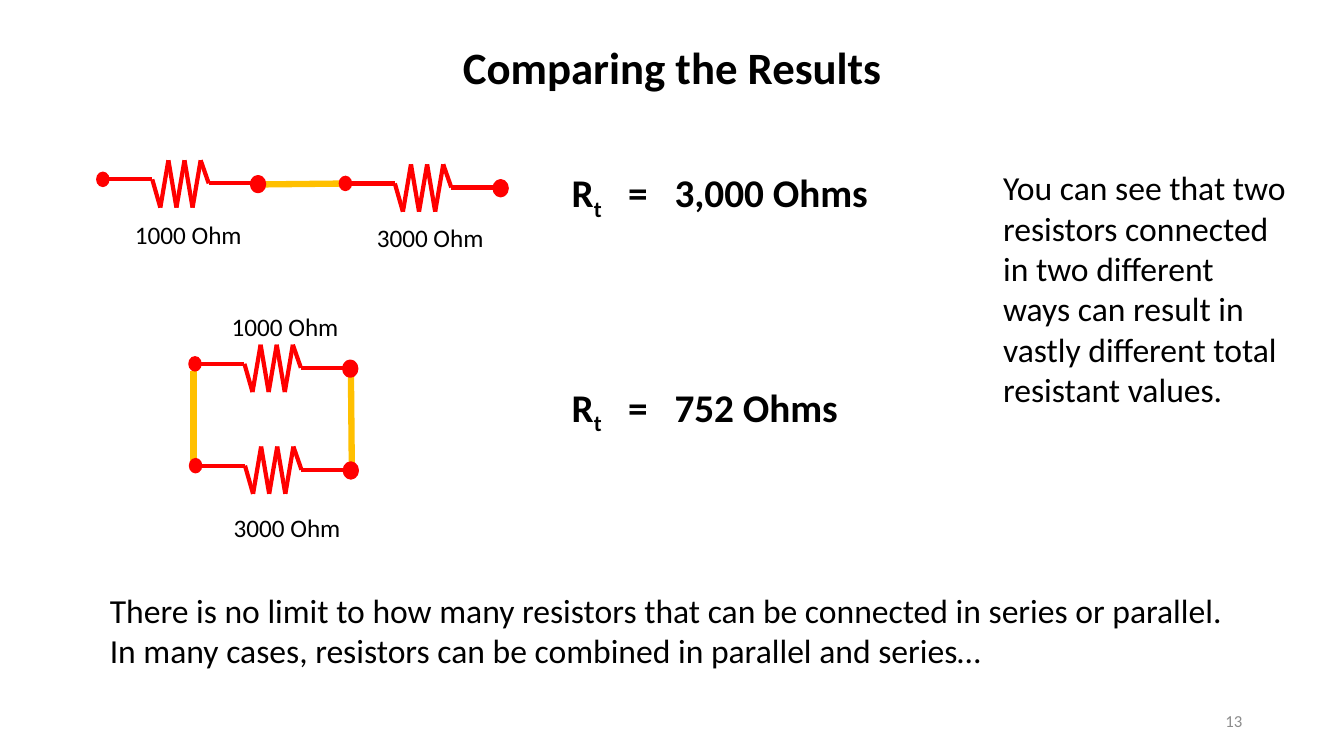
from dataclasses import dataclass
from itertools import pairwise

from lxml import etree
from pptx import Presentation
from pptx import util as u
from pptx.dml.color import RGBColor
from pptx.enum import shapes, text
from pptx.oxml.ns import qn

COLORS = {"ink": "000000", "resistor": "FF0000", "wire": "FFC000", "number": "8C8C8C"}
FONT = "Calibri"
SLIDE_W, SLIDE_H = 13.33, 7.5

Point = tuple[float, float]  # percent of slide width, percent of slide height
Box = tuple[float, float, float, float]  # left, top, width, height in percent

# Resistor outline, measured from the left end of its first terminal
DOT_W, DOT_H = 0.9, 1.87
ZIGZAG_START, ZIGZAG_STEP = 4.13, 0.6
ZIGZAG_HEIGHTS = [0, 3.73, -2.53, 3.73, -2.53, 3.73, -2.53, 0.53]
LEAD_END = 11.55


@dataclass
class Resistor:
    left: float
    lead_y: float
    label: str
    label_at: Point


@dataclass
class Circuit:
    wires: list[tuple[Point, Point]]
    resistors: list[Resistor]


@dataclass
class Caption:
    words: str
    box: Box
    size: int = 24
    color: str = "ink"
    align: text.PP_ALIGN = text.PP_ALIGN.LEFT
    anchor: text.MSO_ANCHOR = text.MSO_ANCHOR.TOP


@dataclass
class Result:
    value: str
    top: float


PARALLEL = Circuit(
    wires=[((26.18, 62.53), (26.11, 49.07)), ((14.4, 60.93), (14.4, 49.07))],
    resistors=[
        Resistor(14.06, 48.13, "1000 Ohm", (16.5, 40.53)),
        Resistor(14.1, 61.6, "3000 Ohm", (16.65, 67.07)),
    ],
)
SERIES = Circuit(
    wires=[((19.2, 24.4), (26.1, 24.27))],
    resistors=[
        Resistor(7.2, 23.73, "1000 Ohm", (9.3, 28.4)),
        Resistor(25.25, 24.27, "3000 Ohm", (27.3, 28.8)),
    ],
)
RESULTS = [Result("752 Ohms", 50), Result("3,000 Ohms", 21.6)]
CAPTIONS = [
    Caption("You can see that two resistors connected in two different ways "
            "can result in vastly different total resistant values.",
            (73.9, 21.47, 22.5, 39.07)),
    Caption("There is no limit to how many resistors that can be connected in "
            "series or parallel. In many cases, resistors can be combined in "
            "parallel and series…", (7.43, 77.33, 84.85, 12.13)),
    Caption("13", (70.67, 92.67, 22.5, 5.33), 12, "number",
            text.PP_ALIGN.RIGHT, text.MSO_ANCHOR.MIDDLE),
]


def x(share: float) -> u.Emu:
    return u.Inches(SLIDE_W * share / 100)


def y(share: float) -> u.Emu:
    return u.Inches(SLIDE_H * share / 100)


def place(box: Box) -> tuple[u.Emu, u.Emu, u.Emu, u.Emu]:
    left, top, width, height = box
    return x(left), y(top), x(width), y(height)


def rgb(name: str) -> RGBColor:
    return RGBColor.from_string(COLORS[name])


def style(paragraph, size: int, color: str = "ink", bold: bool = False) -> None:
    font = paragraph.font
    font.name, font.size, font.bold = FONT, u.Pt(size), bold
    font.color.rgb = rgb(color)


def draw_line(parent, start: Point, end: Point, color: str, width: float) -> None:
    line = parent.add_connector(shapes.MSO_CONNECTOR.STRAIGHT,
                                x(start[0]), y(start[1]), x(end[0]), y(end[1]))
    line.line.color.rgb = rgb(color)
    line.line.width = u.Pt(width)
    etree.SubElement(line._element.spPr, qn("a:effectLst"))


def draw_terminal(parent, left: float, top: float, outline: float) -> None:
    dot = parent.add_shape(shapes.MSO_SHAPE.OVAL, *place((left, top, DOT_W, DOT_H)))
    dot.shadow.inherit = False
    dot.fill.solid()
    dot.fill.fore_color.rgb = rgb("resistor")
    dot.line.color.rgb = rgb("resistor")
    dot.line.width = u.Pt(outline)


def draw_caption(parent, caption: Caption) -> None:
    frame = parent.add_textbox(*place(caption.box)).text_frame
    frame.word_wrap = True
    frame.vertical_anchor = caption.anchor
    paragraph = frame.paragraphs[0]
    paragraph.text = caption.words
    paragraph.alignment = caption.align
    style(paragraph, caption.size, caption.color)


def draw_resistor(parent, resistor: Resistor) -> None:
    zigzag = [(ZIGZAG_START + i * ZIGZAG_STEP, dy) for i, dy in enumerate(ZIGZAG_HEIGHTS)]
    outline = [(DOT_W, 0), *zigzag, (LEAD_END, ZIGZAG_HEIGHTS[-1])]
    points = [(resistor.left + dx, resistor.lead_y + dy) for dx, dy in outline]
    for start, end in pairwise(points):
        draw_line(parent, start, end, "resistor", 3)
    draw_terminal(parent, resistor.left + LEAD_END, resistor.lead_y - 0.3, 3)
    draw_terminal(parent, resistor.left, resistor.lead_y - DOT_H / 2, 1)
    draw_caption(parent, Caption(resistor.label, (*resistor.label_at, 11.5, 5.33), 18))


def draw_circuit(slide, circuit: Circuit) -> None:
    parent = slide.shapes.add_group_shape().shapes
    for start, end in circuit.wires:
        draw_line(parent, start, end, "wire", 4.5)
    for resistor in circuit.resistors:
        draw_resistor(parent, resistor)


def draw_result(slide, result: Result) -> None:
    frame = slide.shapes.add_textbox(*place((41.8, result.top, 25.65, 7.6))).text_frame
    frame.word_wrap = True
    equation = frame.paragraphs[0]
    style(equation, 28, bold=True)
    equation.add_run().text = "R"
    subscript = equation.add_run()
    subscript.text = "t"
    subscript.font._element.set("baseline", "-25000")
    equation.add_run().text = f"\t=\t{result.value}"
    # Tab stops line up the equals sign and the value
    properties = equation._p.get_or_add_pPr()
    stops = etree.Element(qn("a:tabLst"))
    properties.insert(0, stops)
    for share in (4.2, 7.65):
        etree.SubElement(stops, qn("a:tab"), pos=str(x(share)), algn="l")


def draw_title(slide, words: str) -> None:
    title = slide.shapes.title
    title.left, title.top, title.width, title.height = place((16.28, 4.53, 67.5, 10.27))
    frame = title.text_frame
    frame.text = words
    frame.auto_size = text.MSO_AUTO_SIZE.NONE
    frame.vertical_anchor = text.MSO_ANCHOR.TOP
    frame.paragraphs[0].alignment = text.PP_ALIGN.CENTER
    style(frame.paragraphs[0], 32, bold=True)


def main() -> None:
    deck = Presentation()
    deck.slide_width, deck.slide_height = u.Inches(SLIDE_W), u.Inches(SLIDE_H)
    slide = deck.slides.add_slide(deck.slide_layouts[5])

    draw_title(slide, "Comparing the Results")
    for circuit in (PARALLEL, SERIES):
        draw_circuit(slide, circuit)
    for result in RESULTS:
        draw_result(slide, result)
    for caption in CAPTIONS:
        draw_caption(slide.shapes, caption)

    deck.save("out.pptx")


if __name__ == "__main__":
    main()
